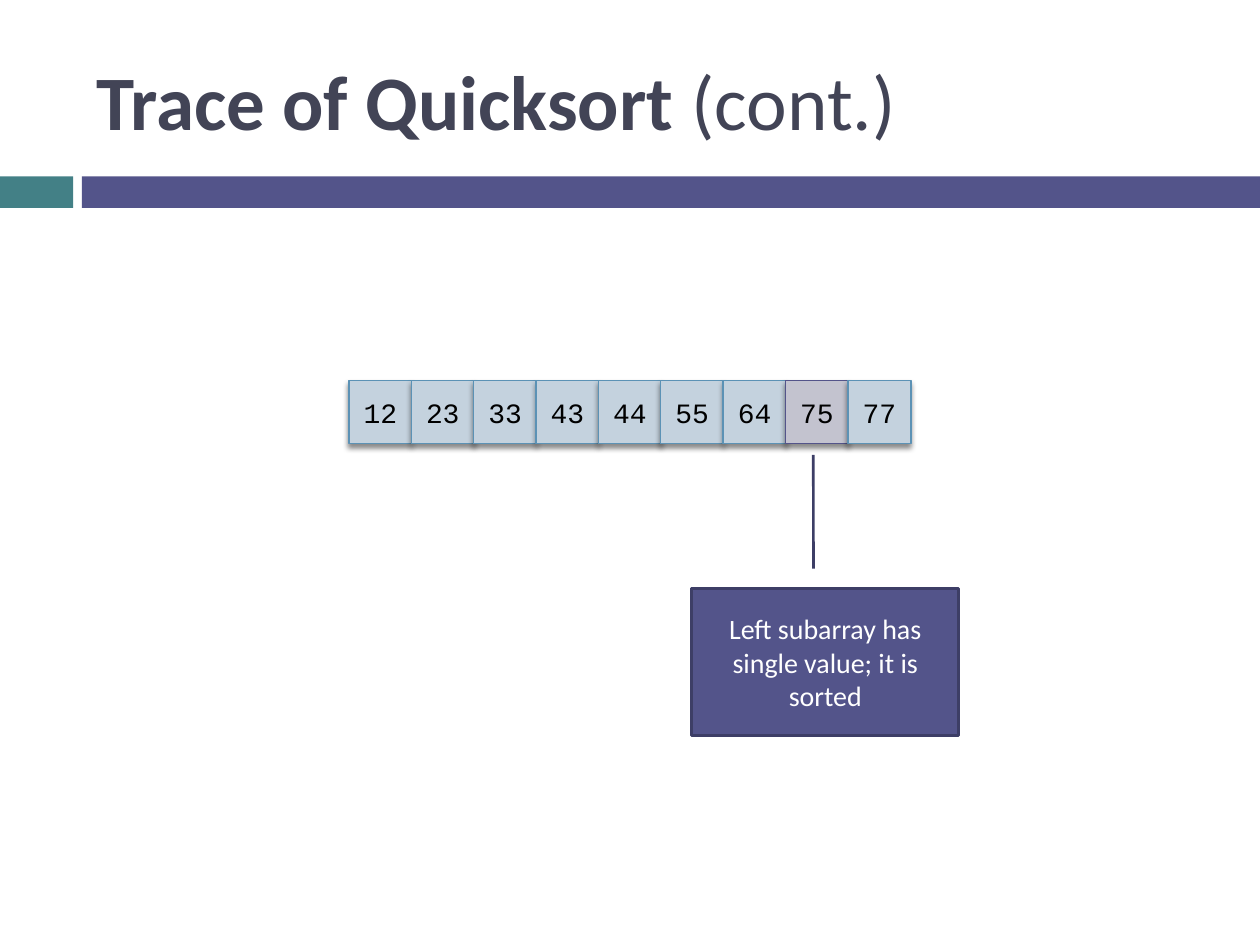
"""Build the slide that traces a step of quicksort on a sorted array."""
from lxml.etree import SubElement
from pptx import Presentation
from pptx.dml.color import RGBColor
from pptx.enum.shapes import MSO_SHAPE
from pptx.enum.text import MSO_ANCHOR, PP_ALIGN
from pptx.oxml.ns import qn
from pptx.util import Pt

TEAL = RGBColor(0x43, 0x80, 0x86)
PURPLE = RGBColor(0x53, 0x54, 0x8A)
DARK_PURPLE = RGBColor(0x3D, 0x3E, 0x66)
SLATE = RGBColor(0x42, 0x44, 0x56)
CELL_BLUE = RGBColor(0xC4, 0xD2, 0xDE)
CELL_LINE = RGBColor(0x5C, 0x92, 0xB5)
CELL_MAUVE = RGBColor(0xC3, 0xC3, 0xCF)
BLACK = RGBColor(0, 0, 0)
WHITE = RGBColor(0xFF, 0xFF, 0xFF)

TITLE = [("Trace of Quicksort ", True), ("(cont.)", False)]
BARS = [(0, 41.8, TEAL), (46.8, 673.2, PURPLE)]
VALUES = [12, 23, 33, 43, 44, 55, 64, 75, 77]
SORTED_VALUE = 75
NOTE = "Left subarray has single value; it is sorted"
NOTE_POINTER = [-0.134, 0.456, -0.905, 0.455]

CELL_LEFT, CELL_TOP, CELL_SIZE, CELL_STEP = 199.4, 217.4, 36, 35.64


def add_run(p, text, font, size, color, bold=False):
    r = p.add_run()
    r.text = text
    r.font.name = font
    r.font.size = Pt(size)
    r.font.bold = bold
    r.font.color.rgb = color


def add_box(shapes, kind, box, fill, line=None, width=0):
    sp = shapes.add_shape(kind, *map(Pt, box))
    sp.shadow.inherit = False
    sp.fill.solid()
    sp.fill.fore_color.rgb = fill
    if line is None:
        sp.line.fill.background()
    else:
        sp.line.color.rgb = line
        sp.line.width = Pt(width)
    return sp


def add_label(sp, text, font, color):
    tf = sp.text_frame
    tf.word_wrap = True
    tf.vertical_anchor = MSO_ANCHOR.MIDDLE
    p = tf.paragraphs[0]
    p.alignment = PP_ALIGN.CENTER
    add_run(p, text, font, 16, color)


def add_drop_shadow(sp):
    effects = sp._element.spPr.find(qn("a:effectLst"))
    shadow = SubElement(effects, qn("a:outerShdw"), blurRad=str(Pt(3)),
                        dist=str(Pt(2.4)), dir="5400000", rotWithShape="0")
    color = SubElement(shadow, qn("a:srgbClr"), val=str(BLACK))
    SubElement(color, qn("a:alpha"), val="45000")


def main():
    prs = Presentation()
    prs.slide_width, prs.slide_height = Pt(720), Pt(540)
    s = prs.slides.add_slide(prs.slide_layouts[6])

    for left, width, color in BARS:
        add_box(s.shapes, MSO_SHAPE.RECTANGLE, (left, 100.8, width, 18), color)

    tf = s.shapes.add_textbox(Pt(48), Pt(18), Pt(642), Pt(78)).text_frame
    tf.word_wrap = True
    tf.vertical_anchor = MSO_ANCHOR.MIDDLE
    for text, bold in TITLE:
        add_run(tf.paragraphs[0], text, "Calibri", 44, SLATE, bold)

    array = s.shapes.add_group_shape()
    for i, value in enumerate(VALUES):
        fill, line = (CELL_MAUVE, PURPLE) if value == SORTED_VALUE else (CELL_BLUE, CELL_LINE)
        box = (CELL_LEFT + i * CELL_STEP, CELL_TOP, CELL_SIZE, CELL_SIZE)
        sp = add_box(array.shapes, MSO_SHAPE.RECTANGLE, box, fill, line, 0.79)
        add_drop_shadow(sp)
        add_label(sp, str(value), "Courier New", BLACK)

    note = add_box(s.shapes, MSO_SHAPE.LINE_CALLOUT_1, (395.3, 336.2, 152.6, 84.2),
                   PURPLE, DARK_PURPLE, 1.5)
    for i, adjustment in enumerate(NOTE_POINTER):
        note.adjustments[i] = adjustment
    add_label(note, NOTE, "Calibri", WHITE)

    prs.save("out.pptx")


if __name__ == "__main__":
    main()
